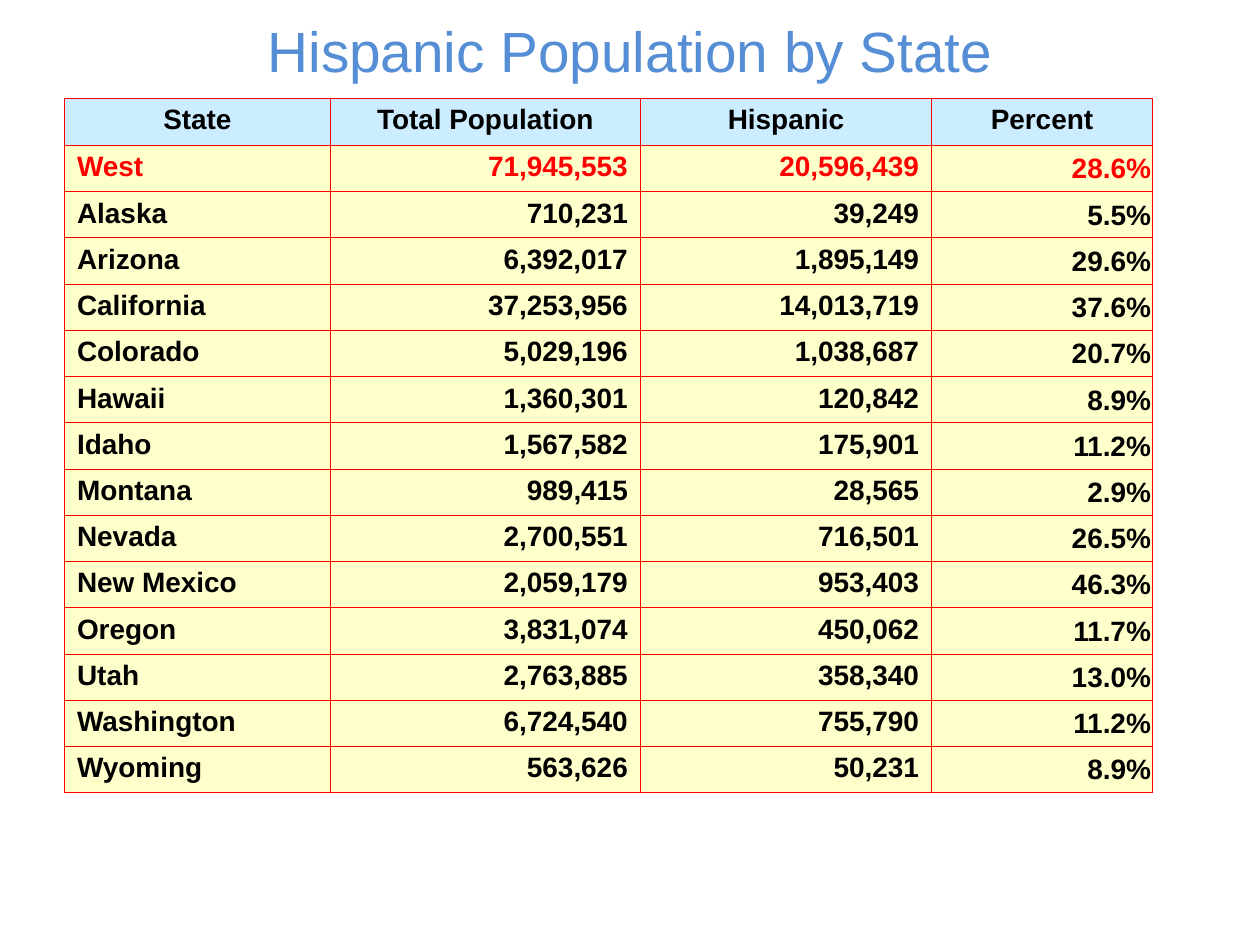
from lxml import etree
from pptx import Presentation
from pptx import util as u
from pptx.dml.color import RGBColor
from pptx.enum import text
from pptx.oxml import ns

BLACK = RGBColor(0x00, 0x00, 0x00)
RED = RGBColor(0xFF, 0x00, 0x00)
TITLE_BLUE = RGBColor(0x55, 0x8E, 0xD5)
HEADER_BLUE = RGBColor(0xCC, 0xEC, 0xFF)
BODY_YELLOW = RGBColor(0xFF, 0xFF, 0xCC)

LEFT, CENTER, RIGHT = text.PP_ALIGN.LEFT, text.PP_ALIGN.CENTER, text.PP_ALIGN.RIGHT

COLUMN_WIDTHS = [5.36, 6.25, 5.87, 4.45]
HEADER_HEIGHT, ROW_HEIGHT, WASHINGTON_HEIGHT = 0.95, 0.93, 0.61

HEADERS = ["State", "Total Population", "Hispanic", "Percent"]
POPULATIONS = [
    ("West", 71945553, 20596439, 28.6),
    ("Alaska", 710231, 39249, 5.5),
    ("Arizona", 6392017, 1895149, 29.6),
    ("California", 37253956, 14013719, 37.6),
    ("Colorado", 5029196, 1038687, 20.7),
    ("Hawaii", 1360301, 120842, 8.9),
    ("Idaho", 1567582, 175901, 11.2),
    ("Montana", 989415, 28565, 2.9),
    ("Nevada", 2700551, 716501, 26.5),
    ("New Mexico", 2059179, 953403, 46.3),
    ("Oregon", 3831074, 450062, 11.7),
    ("Utah", 2763885, 358340, 13.0),
    ("Washington", 6724540, 755790, 11.2),
    ("Wyoming", 563626, 50231, 8.9),
]


class SlideBuilder:
    font_name = "Arial"
    table_size = 16
    border_width = 0.5

    def __init__(self, slide):
        self.slide = slide

    def add_words(self, frame, words, size, color, align, bold=False):
        paragraph = frame.paragraphs[0]
        paragraph.alignment = align
        run = paragraph.add_run()
        run.text = words
        font = run.font
        font.name, font.size, font.bold = self.font_name, u.Pt(size), bold
        font.color.rgb = color

    def title(self, words, left, top, width, height):
        box = self.slide.shapes.add_textbox(u.Cm(left), u.Cm(top), u.Cm(width), u.Cm(height))
        frame = box.text_frame
        frame.word_wrap = True
        frame.vertical_anchor = text.MSO_ANCHOR.MIDDLE
        self.add_words(frame, words, 32.4, TITLE_BLUE, CENTER)

    def table(self, left, top, widths, heights):
        table = self.slide.shapes.add_table(
            len(heights), len(widths), u.Cm(left), u.Cm(top),
            u.Cm(sum(widths)), u.Cm(sum(heights))).table
        table.first_row = table.horz_banding = False
        for column, width in zip(table.columns, widths):
            column.width = u.Cm(width)
        for row, height in zip(table.rows, heights):
            row.height = u.Cm(height)
        return table

    def cell(self, cell, words, fill, color, align):
        self.borders(cell)
        cell.fill.solid()
        cell.fill.fore_color.rgb = fill
        self.add_words(cell.text_frame, words, self.table_size, color, align, bold=True)

    def borders(self, cell):
        properties = cell._tc.get_or_add_tcPr()
        for side in ("a:lnL", "a:lnR", "a:lnT", "a:lnB"):
            line = etree.SubElement(properties, ns.qn(side), w=str(u.Pt(self.border_width)))
            solid = etree.SubElement(line, ns.qn("a:solidFill"))
            etree.SubElement(solid, ns.qn("a:srgbClr"), val=str(RED))

    def tight(self, cell):
        """Center the cell vertically and leave almost no margin."""
        cell.vertical_anchor = text.MSO_ANCHOR.MIDDLE
        cell.margin_left = cell.margin_right = cell.margin_top = u.Cm(0.03)
        cell.margin_bottom = 0


def main():
    presentation = Presentation()
    presentation.slide_width, presentation.slide_height = u.Cm(25.4), u.Cm(19.05)
    builder = SlideBuilder(presentation.slides.add_slide(presentation.slide_layouts[6]))
    builder.title("Hispanic Population by State", 0, 0.58, 25.4, 0.86)

    heights = [HEADER_HEIGHT] + [
        WASHINGTON_HEIGHT if state == "Washington" else ROW_HEIGHT
        for state, *_ in POPULATIONS]
    table = builder.table(1.3, 1.98, COLUMN_WIDTHS, heights)
    for column, header in enumerate(HEADERS):
        builder.cell(table.cell(0, column), header, HEADER_BLUE, BLACK, CENTER)
    for row, (state, total, hispanic, percent) in enumerate(POPULATIONS, start=1):
        color = RED if state == "West" else BLACK
        values = [state, f"{total:,}", f"{hispanic:,}", f"{percent:.1f}%"]
        for column, value in enumerate(values):
            align = RIGHT if column else LEFT
            builder.cell(table.cell(row, column), value, BODY_YELLOW, color, align)
        builder.tight(table.cell(row, len(values) - 1))

    presentation.save("out.pptx")


if __name__ == "__main__":
    main()
